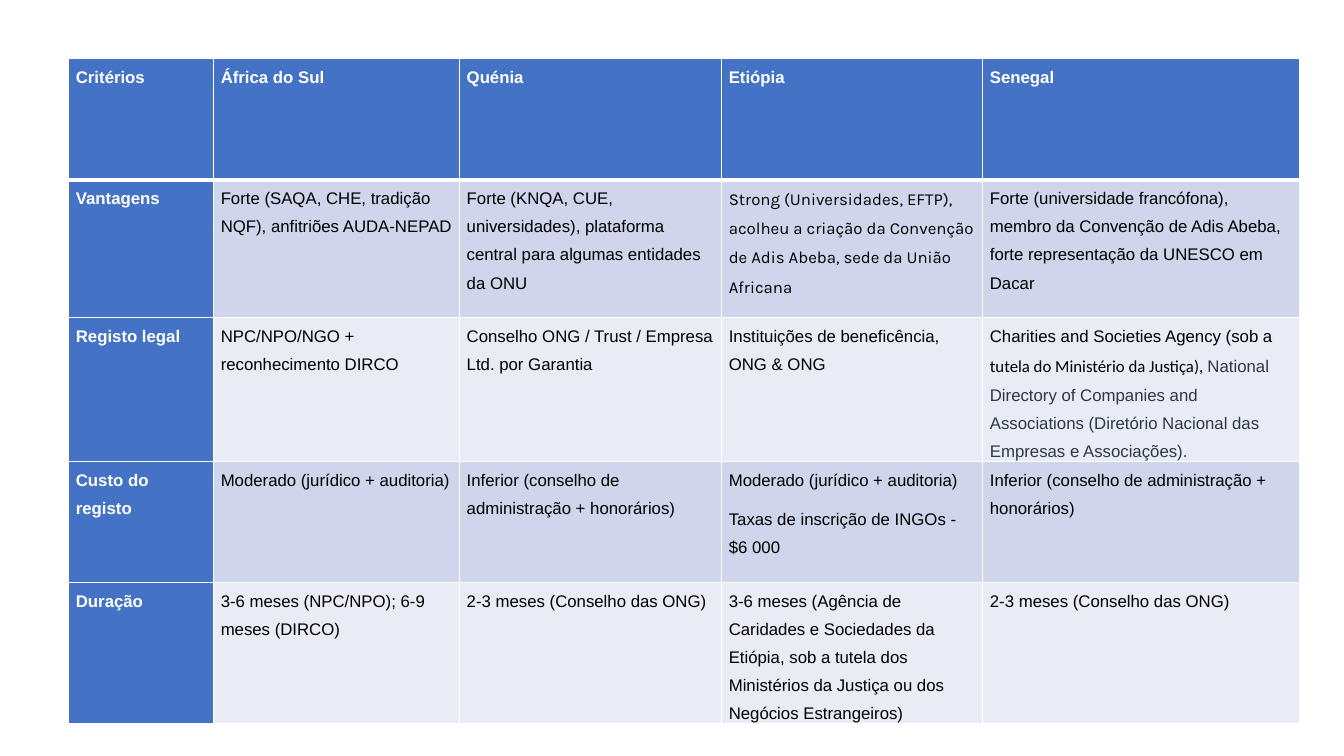
from dataclasses import dataclass

from lxml import etree
from pptx import Presentation
from pptx.dml.color import RGBColor
from pptx.oxml.ns import qn
from pptx.util import Pt


@dataclass(frozen=True)
class Theme:
    head: str = "4472C4"
    dark: str = "CFD5EA"
    light: str = "E9EBF5"
    white: str = "FFFFFF"
    ink: str = "000000"
    slate: str = "2D3748"
    font: str = "Arial"
    alt: str = "Karla"
    mixed: str = "Calibri"
    size: int = 12
    thin: int = 1
    thick: int = 3


THEME = Theme()
BOX = (49, 42, 879, 482.4)
COLS = (103.5, 175.7, 187.2, 186.5, 226.1)
ROWS = (86.4, 98.6, 98.6, 86.4, 97.9)
KARLA = (1, 3)
AGENCY = [
    ("Charities and Societies Agency (sob a ", THEME.font, THEME.ink),
    ("tutela do Ministério da Justiça), ", THEME.mixed, THEME.ink),
    ("National Directory of Companies and Associations "
     "(Diretório Nacional das Empresas e Associações).", THEME.font, THEME.slate),
]
DATA = [
    ["Critérios", "África do Sul", "Quénia", "Etiópia", "Senegal"],
    ["Vantagens",
     "Forte (SAQA, CHE, tradição NQF), anfitriões AUDA-NEPAD",
     "Forte (KNQA, CUE, universidades), plataforma central para algumas entidades da ONU",
     "Strong (Universidades, EFTP), acolheu a criação da Convenção de Adis Abeba, "
     "sede da União Africana",
     "Forte (universidade francófona), membro da Convenção de Adis Abeba, "
     "forte representação da UNESCO em Dacar"],
    ["Registo legal",
     "NPC/NPO/NGO + reconhecimento DIRCO",
     "Conselho ONG / Trust / Empresa Ltd. por Garantia",
     "Instituições de beneficência, ONG & ONG",
     AGENCY],
    ["Custo do registo",
     "Moderado (jurídico + auditoria)",
     "Inferior (conselho de administração + honorários)",
     "Moderado (jurídico + auditoria)\nTaxas de inscrição de INGOs - $6 000",
     "Inferior (conselho de administração + honorários)"],
    ["Duração",
     "3-6 meses (NPC/NPO); 6-9 meses (DIRCO)",
     "2-3 meses (Conselho das ONG)",
     "3-6 meses (Agência de Caridades e Sociedades da Etiópia, sob a tutela dos "
     "Ministérios da Justiça ou dos Negócios Estrangeiros)",
     "2-3 meses (Conselho das ONG)"],
]


def add_edges(cell, row):
    props = cell._tc.get_or_add_tcPr()
    thick = {0: "lnB", 1: "lnT"}.get(row)
    for side in ("lnL", "lnR", "lnT", "lnB"):
        width = THEME.thick if side == thick else THEME.thin
        line = etree.SubElement(props, qn("a:" + side), w=str(Pt(width)))
        fill = etree.SubElement(line, qn("a:solidFill"))
        etree.SubElement(fill, qn("a:srgbClr"), val=THEME.white)


def add_text(cell, text, font, color, bold):
    cell.text = text if isinstance(text, str) else ""
    for para in cell.text_frame.paragraphs:
        para.line_spacing = 1.5
        para.space_after = Pt(8)
        para.font.size = Pt(THEME.size)
        para.font.bold = bold
        if isinstance(text, str):
            para.font.name = font
            para.font.color.rgb = RGBColor.from_string(color)
            continue
        for part, face, tint in text:
            run = para.add_run()
            run.text = part
            run.font.name = face
            run.font.color.rgb = RGBColor.from_string(tint)


def fill_cell(cell, row, col, text):
    head = row == 0 or col == 0
    cell.margin_left = cell.margin_right = Pt(5.2)
    cell.margin_top = cell.margin_bottom = 0
    add_edges(cell, row)
    band = THEME.dark if row % 2 else THEME.light
    cell.fill.solid()
    cell.fill.fore_color.rgb = RGBColor.from_string(THEME.head if head else band)
    font = THEME.alt if (row, col) == KARLA else THEME.font
    add_text(cell, text, font, THEME.white if head else THEME.ink, head)


def add_grid(slide, box):
    frame = slide.shapes.add_table(len(ROWS), len(COLS), *map(Pt, box))
    table = frame.table
    table.first_col = True
    for col, width in zip(table.columns, COLS):
        col.width = Pt(width)
    for row, high in zip(table.rows, ROWS):
        row.height = Pt(high)
    for r, line in enumerate(DATA):
        for c, text in enumerate(line):
            fill_cell(table.cell(r, c), r, c, text)


def main():
    deck = Presentation()
    deck.slide_width, deck.slide_height = Pt(960), Pt(540)
    slide = deck.slides.add_slide(deck.slide_layouts[6])
    add_grid(slide, BOX)
    deck.save("out.pptx")


if __name__ == "__main__":
    main()
